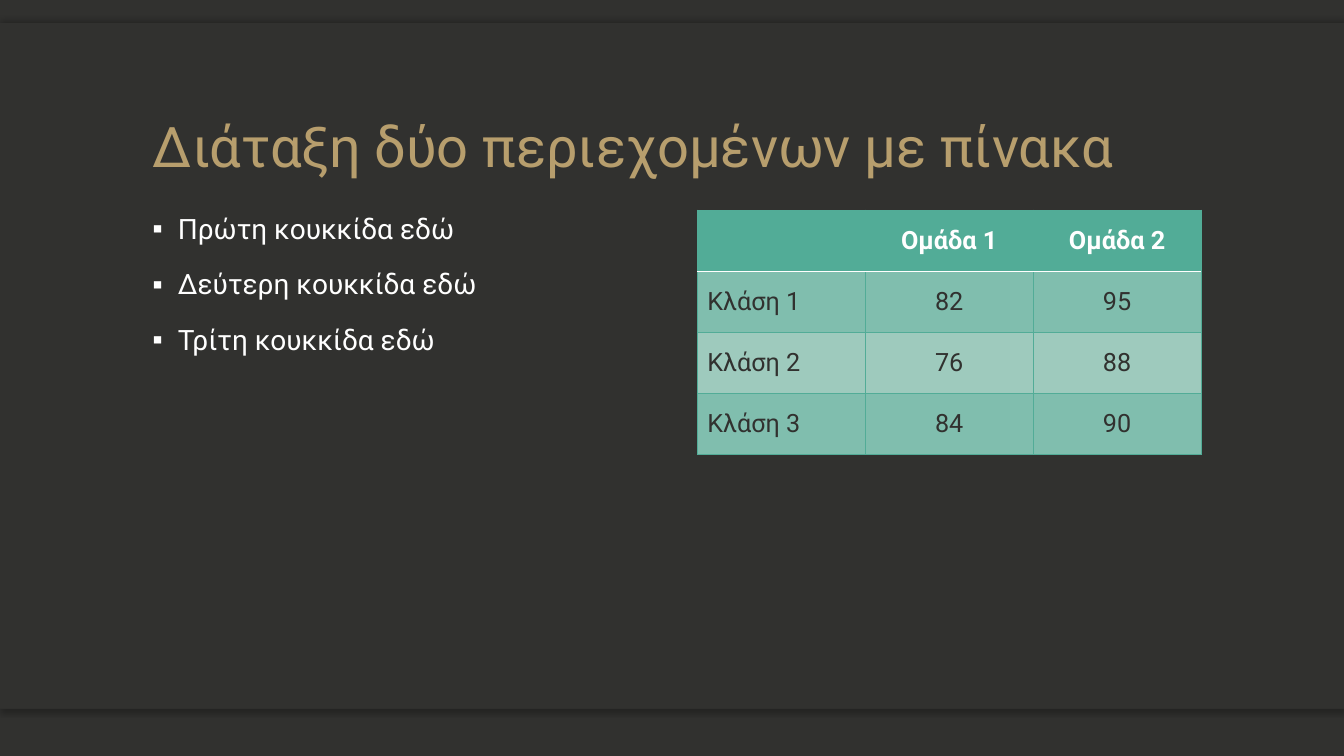
from dataclasses import dataclass

from lxml import etree
from pptx import Presentation
from pptx import util as u
from pptx.dml.color import RGBColor
from pptx.enum import shapes, text
from pptx.oxml import parse_xml
from pptx.oxml.ns import nsdecls, qn

PX = 9525
FONT = "Roboto"
COLORS = {
    "dark": "31312F",
    "gold": "B79E6D",
    "white": "FFFFFF",
    "teal": "52AC97",
    "band_odd": "80BEAE",
    "band_even": "9ECABD",
}
TITLE = "Διάταξη δύο περιεχομένων με πίνακα"
BULLETS = ["Πρώτη κουκκίδα εδώ", "Δεύτερη κουκκίδα εδώ", "Τρίτη κουκκίδα εδώ"]
ROWS = [
    ["", "Ομάδα 1", "Ομάδα 2"],
    ["Κλάση 1", "82", "95"],
    ["Κλάση 2", "76", "88"],
    ["Κλάση 3", "84", "90"],
]


@dataclass(frozen=True)
class Box:
    left: int
    top: int
    width: int
    height: int

    def emu(self) -> tuple[int, ...]:
        return tuple(side * PX for side in (self.left, self.top, self.width, self.height))


@dataclass(frozen=True)
class Panel:
    box: Box
    shadow_angle: int | None = None


PANELS = [
    Panel(Box(0, 628, 1280, 47), 90),
    Panel(Box(0, 22, 1280, 47), 270),
    Panel(Box(0, 22, 1280, 653)),
]
TITLE_BOX = Box(136, 44, 1008, 132)
BODY_BOX = Box(136, 200, 480, 448)
TABLE_BOX = Box(664, 200, 480, 233)


def color(name: str) -> RGBColor:
    return RGBColor.from_string(COLORS[name])


def write(paragraph, content: str, *, size: int, ink: str, bold: bool = False,
          align=text.PP_ALIGN.LEFT, line_spacing: float = 1.0, before: int = 0) -> None:
    paragraph.alignment = align
    paragraph.line_spacing = line_spacing
    paragraph.space_before = u.Pt(before)
    paragraph.font.size = u.Pt(size)
    if content:
        run = paragraph.add_run()
        run.text = content
        run.font.name = FONT
        run.font.size = u.Pt(size)
        run.font.bold = bold
        run.font.color.rgb = color(ink)


def draw_panel(slide, panel: Panel) -> None:
    shape = slide.shapes.add_shape(shapes.MSO_SHAPE.RECTANGLE, *panel.box.emu())
    shape.fill.solid()
    shape.fill.fore_color.rgb = color("dark")
    shape.line.fill.background()
    shape.shadow.inherit = False
    if panel.shadow_angle is not None:
        effects = shape.element.spPr.find(qn("a:effectLst"))
        effects.append(parse_xml(
            f'<a:outerShdw {nsdecls("a")} blurRad="{u.Pt(4)}" dist="{u.Pt(2)}" '
            f'dir="{panel.shadow_angle * 60000}" algn="ctr" rotWithShape="0">'
            '<a:srgbClr val="000000"><a:alpha val="25000"/></a:srgbClr></a:outerShdw>'))


def draw_title(slide) -> None:
    title = slide.shapes.title
    slide.shapes.element.append(title.element)
    title.left, title.top, title.width, title.height = TITLE_BOX.emu()
    frame = title.text_frame
    frame.word_wrap = True
    frame.auto_size = text.MSO_AUTO_SIZE.NONE
    frame.vertical_anchor = text.MSO_ANCHOR.BOTTOM
    write(frame.paragraphs[0], TITLE, size=40, ink="gold", line_spacing=0.9)


def draw_bullets(slide) -> None:
    frame = slide.shapes.add_textbox(*BODY_BOX.emu()).text_frame
    frame.word_wrap = True
    for index, content in enumerate(BULLETS):
        paragraph = frame.add_paragraph() if index else frame.paragraphs[0]
        properties = paragraph._p.get_or_add_pPr()
        properties.set("marL", str(24 * PX))
        properties.set("indent", str(-24 * PX))
        etree.SubElement(properties, qn("a:buSzPct"), val="90000")
        etree.SubElement(properties, qn("a:buFont"), typeface=FONT)
        etree.SubElement(properties, qn("a:buChar"), char="▪")
        write(paragraph, content, size=20, ink="white", line_spacing=0.9,
              before=18 if index else 0)


def set_borders(cell, row: int) -> None:
    properties = cell._tc.get_or_add_tcPr()
    white_edge = {0: "lnB", 1: "lnT"}.get(row)
    for position, edge in enumerate(("lnL", "lnR", "lnT", "lnB")):
        name, width = ("white", 1) if edge == white_edge else ("teal", 0.5)
        properties.insert(position, parse_xml(
            f'<a:{edge} {nsdecls("a")} w="{u.Pt(width)}"><a:solidFill>'
            f'<a:srgbClr val="{COLORS[name]}"/></a:solidFill></a:{edge}>'))


def draw_table(slide) -> None:
    table = slide.shapes.add_table(len(ROWS), len(ROWS[0]), *TABLE_BOX.emu()).table
    for row, values in enumerate(ROWS):
        header = row == 0
        fill = "teal" if header else "band_odd" if row % 2 else "band_even"
        for column, value in enumerate(values):
            cell = table.cell(row, column)
            cell.fill.solid()
            cell.fill.fore_color.rgb = color(fill)
            cell.vertical_anchor = text.MSO_ANCHOR.MIDDLE
            set_borders(cell, row)
            write(cell.text_frame.paragraphs[0], value, size=18, bold=header,
                  ink="white" if header else "dark",
                  align=text.PP_ALIGN.CENTER if column else text.PP_ALIGN.LEFT)


def main() -> None:
    presentation = Presentation()
    presentation.slide_width = 1280 * PX
    presentation.slide_height = 720 * PX
    slide = presentation.slides.add_slide(presentation.slide_layouts.get_by_name("Title Only"))
    slide.background.fill.solid()
    slide.background.fill.fore_color.rgb = color("dark")
    for panel in PANELS:
        draw_panel(slide, panel)
    draw_title(slide)
    draw_bullets(slide)
    draw_table(slide)
    presentation.save("out.pptx")


if __name__ == "__main__":
    main()
